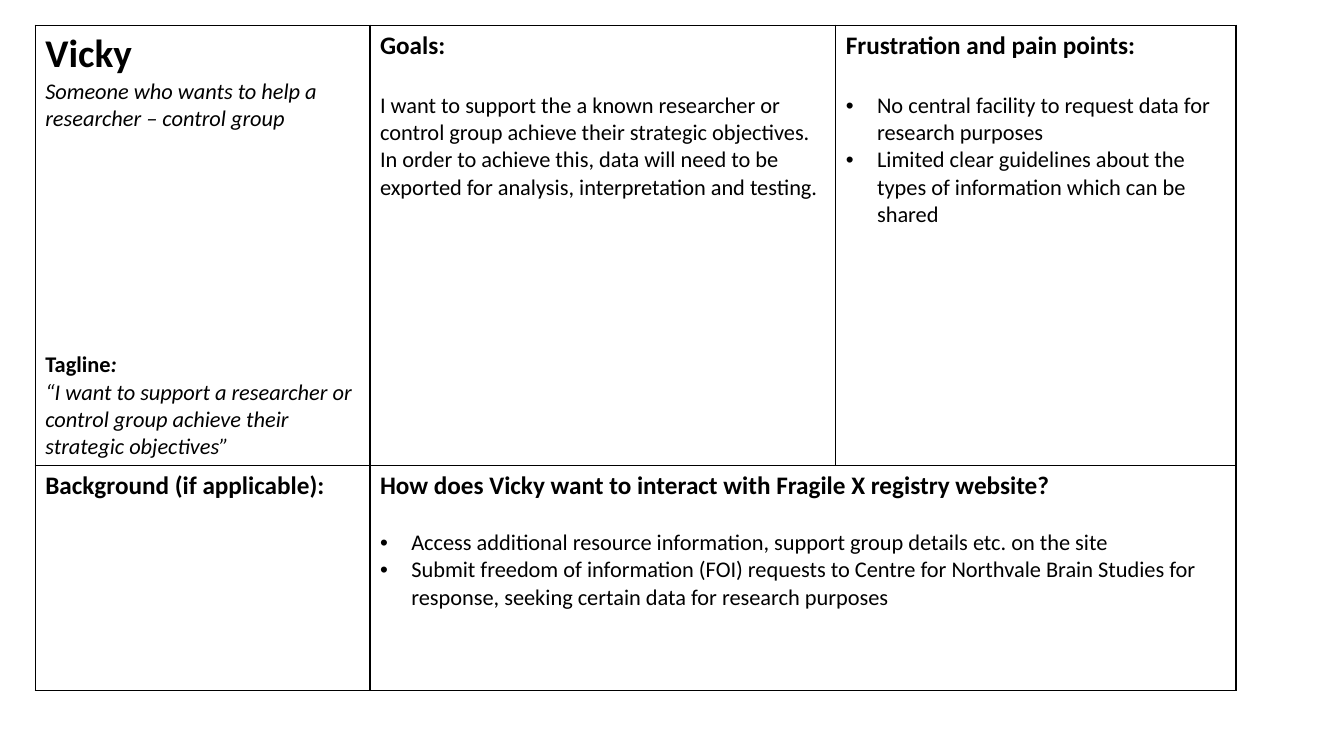
"""Build a one-slide persona card laid out as a two-row table."""
from lxml import etree
from pptx import Presentation, util as u
from pptx.dml.color import RGBColor
from pptx.oxml.ns import qn

BLACK = RGBColor(0, 0, 0)
WHITE = RGBColor(255, 255, 255)
FONT = "Calibri"
LEFT, TOP = 0.35, 0.25
COLS = [3.32, 4.62, 3.97]
ROWS = [4.37, 2.23]
INDENT = 0.31

# style: size, bold, italic, bulleted
STYLES = {
    "name": (28, True, False, False),
    "quote": (16, False, True, False),
    "label": (16, True, False, False),
    "label_end": (16, True, True, False),
    "head": (18, True, False, False),
    "body": (16, False, False, False),
    "bullet": (16, False, False, True),
}

# (row, column): paragraphs as (points before, [(style, words), ...])
CELLS = {
    (0, 0): [
        (0, [("name", "Vicky")]),
        (0, [("quote", "Someone who wants to help a researcher – control group")]),
        (156, [("label", "Tagline"), ("label_end", ":")]),
        (0, [("quote", "“I want to support a researcher or control group achieve "
                       "their strategic objectives”")]),
    ],
    (0, 1): [
        (0, [("head", "Goals:")]),
        (22, [("body", "I want to support the a known researcher or control group "
                       "achieve their strategic objectives. In order to achieve this, "
                       "data will need to be exported for analysis, interpretation "
                       "and testing.")]),
    ],
    (0, 2): [
        (0, [("head", "Frustration and pain points:")]),
        (22, [("bullet", "No central facility to request data for research purposes")]),
        (0, [("bullet", "Limited clear guidelines about the types of information "
                        "which can be shared")]),
    ],
    (1, 0): [(0, [("head", "Background (if applicable):")])],
    (1, 1): [
        (0, [("head", "How does Vicky want to interact with Fragile X registry website?")]),
        (19.5, [("bullet", "Access additional resource information, support group "
                           "details etc. on the site")]),
        (0, [("bullet", "Submit freedom of information (FOI) requests to Centre for "
                        "Northvale Brain Studies for response, seeking certain data "
                        "for research purposes")]),
    ],
}


def add_borders(cell):
    tcPr = cell._tc.get_or_add_tcPr()
    for side in ("lnL", "lnR", "lnT", "lnB"):
        ln = etree.SubElement(tcPr, qn(f"a:{side}"), w=str(u.Pt(1)))
        fill = etree.SubElement(ln, qn("a:solidFill"))
        etree.SubElement(fill, qn("a:srgbClr"), val=str(BLACK))


def add_bullet(p):
    pPr = p._p.get_or_add_pPr()
    pPr.set("marL", str(u.Inches(INDENT)))
    pPr.set("indent", str(-u.Inches(INDENT)))
    etree.SubElement(pPr, qn("a:buFont"), typeface="Arial")
    etree.SubElement(pPr, qn("a:buChar"), char="•")


def write_cell(cell, paragraphs):
    tf = cell.text_frame
    for i, (before, runs) in enumerate(paragraphs):
        p = tf.add_paragraph() if i else tf.paragraphs[0]
        p.space_before = u.Pt(before)
        for style, words in runs:
            size, bold, italic, bulleted = STYLES[style]
            r = p.add_run()
            r.text = words
            r.font.name, r.font.size = FONT, u.Pt(size)
            r.font.bold, r.font.italic = bold, italic
            r.font.color.rgb = BLACK
            if bulleted:
                add_bullet(p)


def main():
    prs = Presentation()
    prs.slide_width, prs.slide_height = u.Inches(13.33), u.Inches(7.5)
    s = prs.slides.add_slide(prs.slide_layouts[6])
    table = s.shapes.add_table(
        len(ROWS), len(COLS), u.Inches(LEFT), u.Inches(TOP),
        u.Inches(sum(COLS)), u.Inches(sum(ROWS))).table
    table.first_row = table.horz_banding = False
    for column, width in zip(table.columns, COLS):
        column.width = u.Inches(width)
    for row, height in zip(table.rows, ROWS):
        row.height = u.Inches(height)
    for cell in table.iter_cells():
        add_borders(cell)
        cell.fill.solid()
        cell.fill.fore_color.rgb = WHITE
    table.cell(1, 1).merge(table.cell(1, 2))
    for place, paragraphs in CELLS.items():
        write_cell(table.cell(*place), paragraphs)
    prs.save("out.pptx")


if __name__ == "__main__":
    main()
